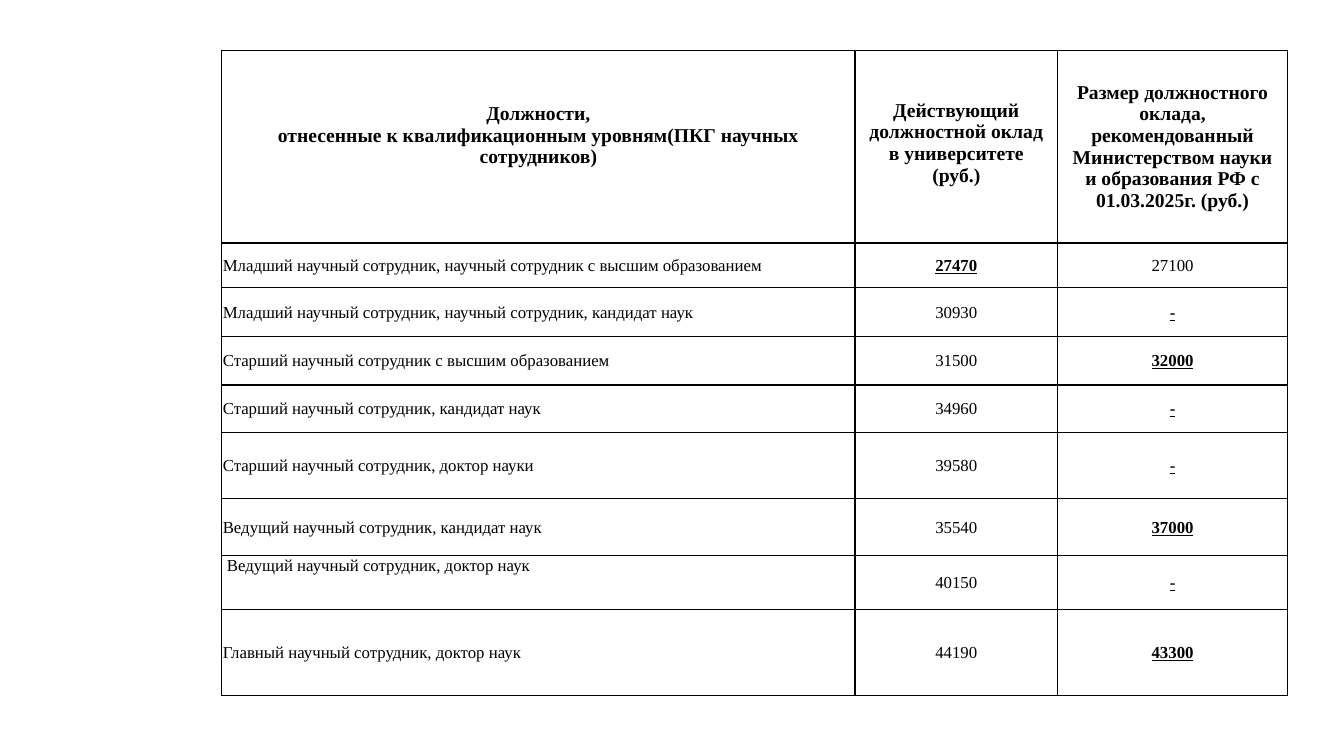
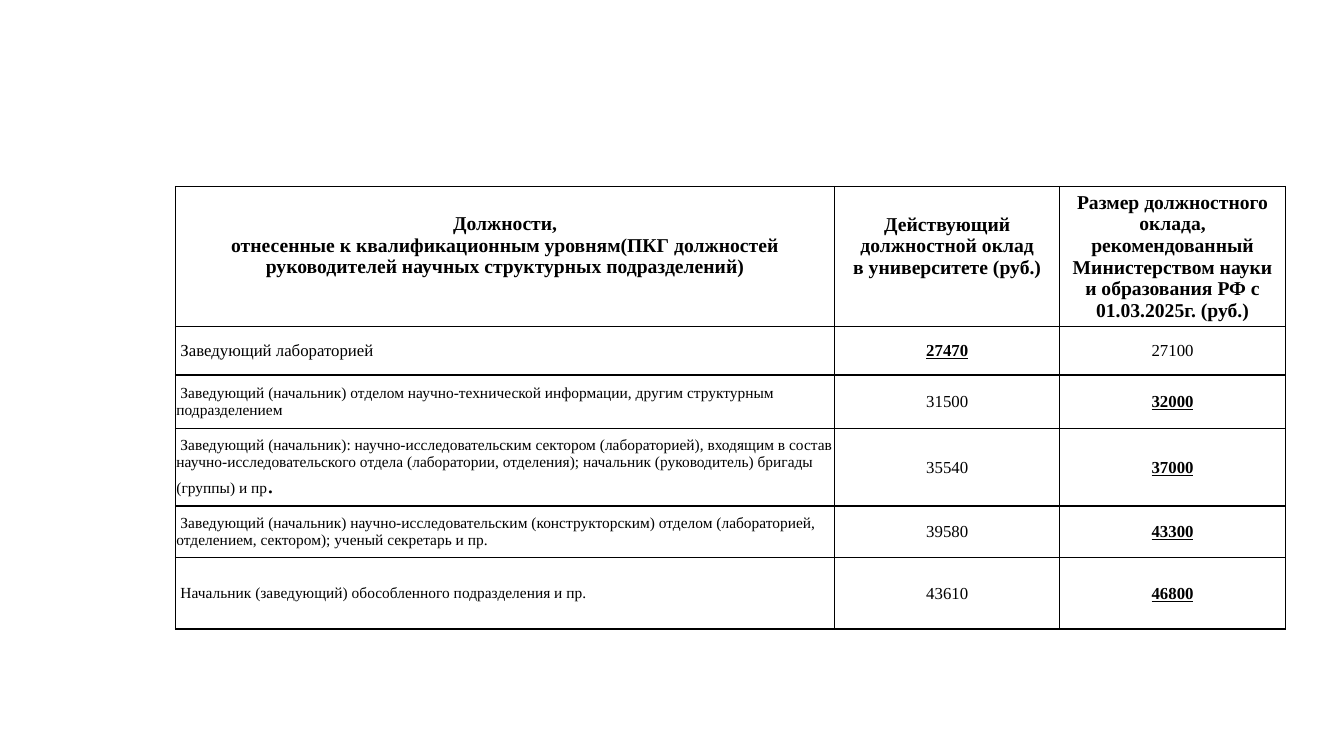
from pptx import Presentation
from pptx.dml.color import RGBColor
from pptx.enum.text import MSO_ANCHOR, PP_ALIGN
from pptx.oxml import parse_xml
from pptx.oxml.ns import nsdecls
from pptx.util import Pt

PX = 9144  # 100 px to the inch
BLACK, WHITE = "000000", "FFFFFF"
FONT = "Times New Roman"
HEADER_SIZE, BODY_SIZE, SMALL_SIZE = 14, 12, 11
HEADER_LINE = 22
FIRST_LINE_INDENT = 4
HEADER_MARGINS = (10, 5, 10, 5)
BODY_MARGINS = (1, 1, 1, 0)

CURRENT_HEADER = ["Действующий должностной оклад", "в университете (руб.)"]
RECOMMENDED_HEADER = [
    "Размер должностного оклада, рекомендованный Министерством науки "
    "и образования РФ с 01.03.2025г. (руб.)"
]

# Each row: position as (text, size) runs, current salary, recommended salary
RESEARCHERS = {
    "group": "отнесенные к квалификационным уровням(ПКГ научных сотрудников)",
    "left": 220, "top": 50,
    "columns": [628, 201, 228],
    "heights": [191, 44, 49, 48, 47, 66, 56, 54, 85],
    "lines_above_current": 2,
    "indented": {7}, "top_aligned": {7},
    "rows": [
        ([("Младший научный сотрудник, научный сотрудник с высшим образованием",
           BODY_SIZE)], "27470", "27100"),
        ([("Младший научный сотрудник, научный сотрудник, кандидат наук",
           BODY_SIZE)], "30930", "-"),
        ([("Старший научный сотрудник с высшим образованием", BODY_SIZE)],
         "31500", "32000"),
        ([("Старший научный сотрудник, кандидат наук", BODY_SIZE)], "34960", "-"),
        ([("Старший научный сотрудник, доктор науки", BODY_SIZE)], "39580", "-"),
        ([("Ведущий научный сотрудник, кандидат наук", BODY_SIZE)],
         "35540", "37000"),
        ([("Ведущий научный сотрудник, доктор наук", BODY_SIZE)], "40150", "-"),
        ([("Главный научный сотрудник, доктор наук", BODY_SIZE)],
         "44190", "43300"),
    ],
}
MANAGERS = {
    "group": "отнесенные к квалификационным уровням(ПКГ должностей "
             "руководителей научных структурных подразделений)",
    "left": 174, "top": 185,
    "columns": [654, 223, 224],
    "heights": [139, 48, 53, 77, 51, 71],
    "lines_above_current": 1,
    "indented": {1, 2, 3, 4, 5}, "top_aligned": set(),
    "rows": [
        ([("Заведующий лабораторией", BODY_SIZE)], "27470", "27100"),
        ([("Заведующий (начальник) отделом научно-технической информации, "
           "другим структурным подразделением", SMALL_SIZE)], "31500", "32000"),
        ([("Заведующий (начальник): научно-исследовательским сектором "
           "(лабораторией), входящим в состав научно-исследовательского отдела "
           "(лаборатории, отделения); начальник (руководитель) бригады "
           "(группы) и пр", SMALL_SIZE), (".", 18)], "35540", "37000"),
        ([("Заведующий (начальник) научно-исследовательским (конструкторским) "
           "отделом (лабораторией, отделением, сектором); ученый секретарь "
           "и пр.", SMALL_SIZE)], "39580", "43300"),
        ([("Начальник (заведующий) обособленного подразделения и пр.",
           SMALL_SIZE)], "43610", "46800"),
    ],
}


def color(value):
    return RGBColor.from_string(value)


def style_cell(cell, margins, anchor=MSO_ANCHOR.MIDDLE):
    """White fill, thin black borders, margins in px."""
    cell.fill.solid()
    cell.fill.fore_color.rgb = color(WHITE)
    cell.vertical_anchor = anchor
    (cell.margin_left, cell.margin_top,
     cell.margin_right, cell.margin_bottom) = [m * PX for m in margins]
    tcPr = cell._tc.get_or_add_tcPr()
    for i, side in enumerate(("lnL", "lnR", "lnT", "lnB")):
        tcPr.insert(i, parse_xml(
            f'<a:{side} {nsdecls("a")} w="{Pt(1)}"><a:solidFill>'
            f'<a:srgbClr val="{BLACK}"/></a:solidFill></a:{side}>'))


def write_cell(cell, paragraphs, align, bold=False, underline=False):
    """Fill a cell with paragraphs, each a list of (text, size) runs."""
    tf = cell.text_frame
    for i, runs in enumerate(paragraphs):
        p = tf.add_paragraph() if i else tf.paragraphs[0]
        p.alignment = align
        for text, size in runs:
            r = p.add_run()
            r.text = text
            r.font.name, r.font.size = FONT, Pt(size)
            r.font.bold, r.font.underline = bold, underline
            r.font.color.rgb = color(BLACK)


def add_header(table, data):
    above = 5 + data["lines_above_current"] * HEADER_LINE
    headers = [
        (["Должности,", data["group"]], (0, 0, 0, HEADER_LINE), MSO_ANCHOR.MIDDLE),
        (CURRENT_HEADER, (10, above, 10, 5), MSO_ANCHOR.TOP),
        (RECOMMENDED_HEADER, HEADER_MARGINS, MSO_ANCHOR.MIDDLE),
    ]
    for col, (lines, margins, anchor) in enumerate(headers):
        cell = table.cell(0, col)
        style_cell(cell, margins, anchor)
        write_cell(cell, [[(line, HEADER_SIZE)] for line in lines],
                   PP_ALIGN.CENTER, bold=True)


def add_salary_slide(prs, data):
    s = prs.slides.add_slide(prs.slide_layouts[6])
    columns, heights = data["columns"], data["heights"]
    table = s.shapes.add_table(
        len(heights), len(columns), data["left"] * PX, data["top"] * PX,
        sum(columns) * PX, sum(heights) * PX).table
    table.horz_banding = False
    for column, width in zip(table.columns, columns):
        column.width = width * PX
    for row, height in zip(table.rows, heights):
        row.height = height * PX

    add_header(table, data)
    for i, (position, *salaries) in enumerate(data["rows"], 1):
        cell = table.cell(i, 0)
        top = i in data["top_aligned"]
        style_cell(cell, BODY_MARGINS, MSO_ANCHOR.TOP if top else MSO_ANCHOR.MIDDLE)
        write_cell(cell, [position], PP_ALIGN.LEFT)
        if i in data["indented"]:
            pPr = cell.text_frame.paragraphs[0]._p.get_or_add_pPr()
            pPr.set("indent", str(FIRST_LINE_INDENT * PX))
        for col, salary in enumerate(salaries, 1):
            # The first row stresses the current salary, the others the recommended one
            stressed = (col == 1) == (i == 1)
            cell = table.cell(i, col)
            style_cell(cell, BODY_MARGINS)
            write_cell(cell, [[(salary, BODY_SIZE)]], PP_ALIGN.CENTER,
                       bold=stressed, underline=stressed)


def main():
    prs = Presentation()
    prs.slide_width, prs.slide_height = 1333 * PX, 750 * PX
    for data in (RESEARCHERS, MANAGERS):
        add_salary_slide(prs, data)
    prs.save("out.pptx")


if __name__ == "__main__":
    main()
